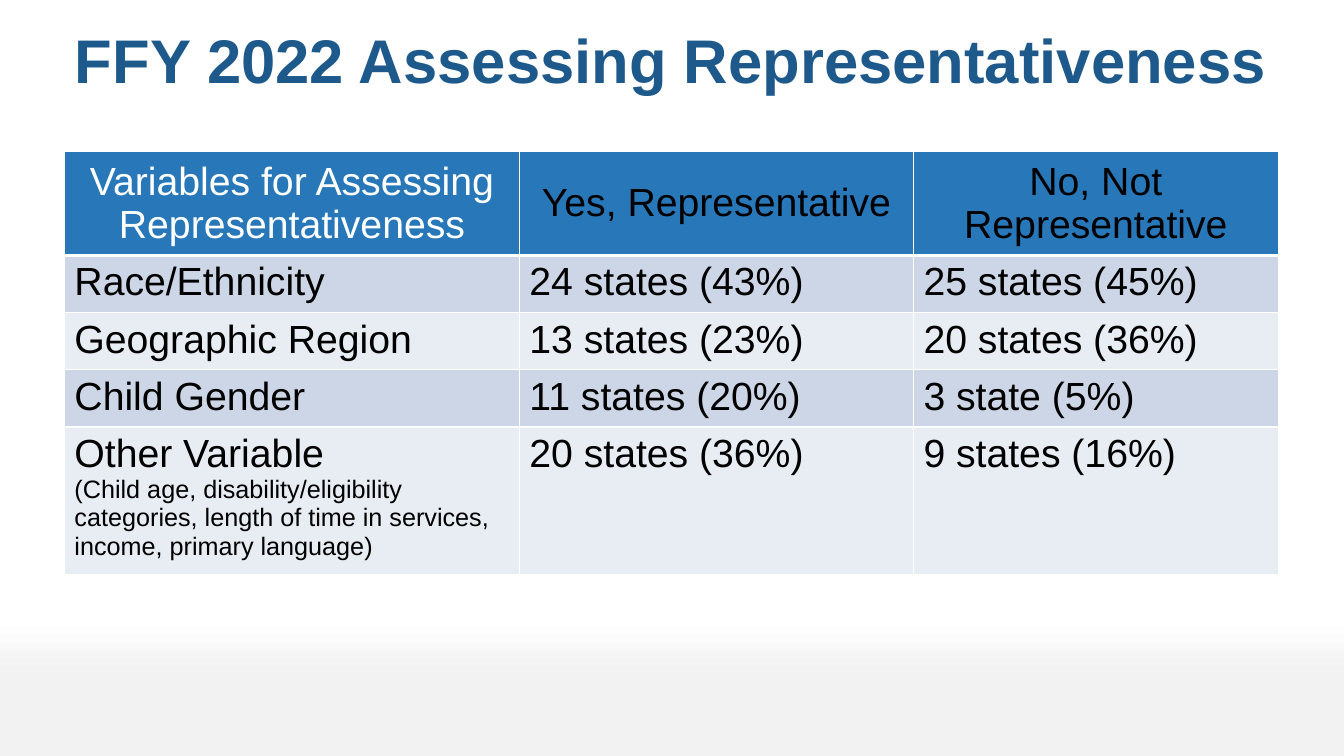
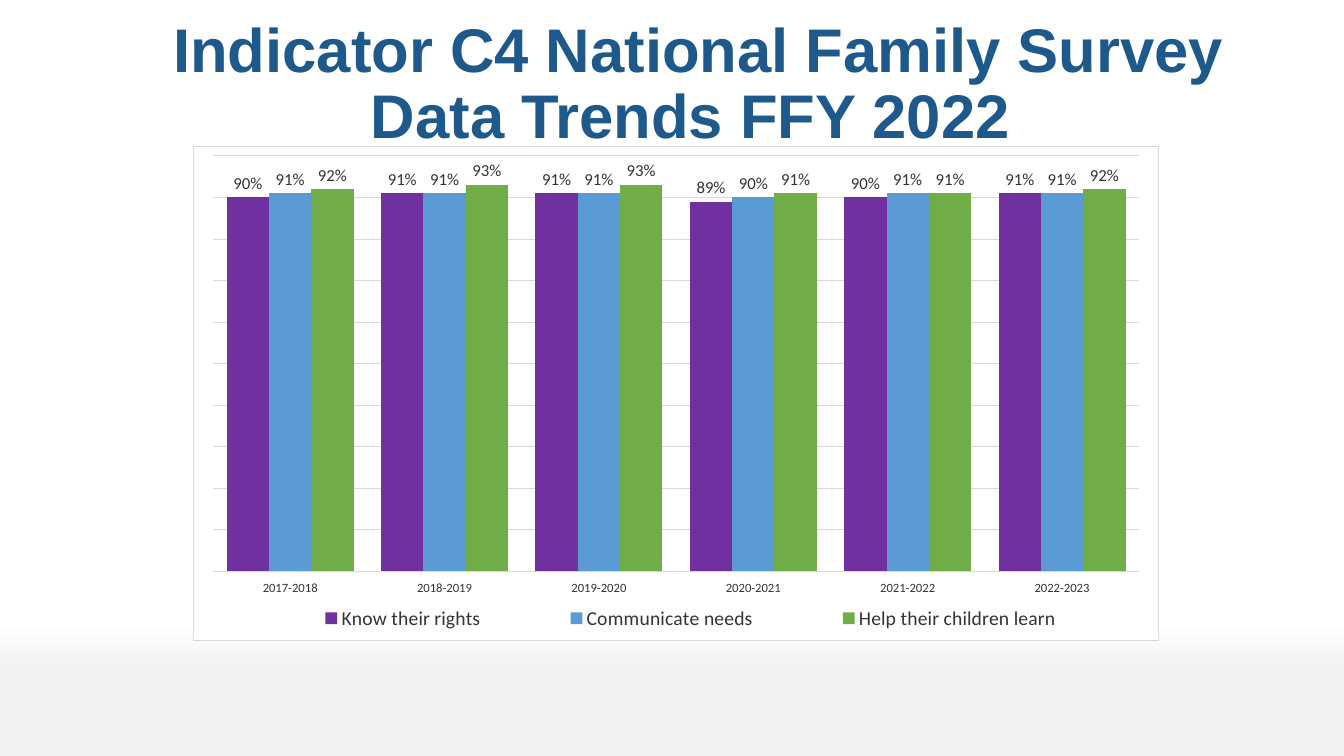
from lxml import etree
from pptx import Presentation
from pptx.chart.data import CategoryChartData
from pptx.dml.color import RGBColor
from pptx.enum.chart import XL_CHART_TYPE as ChartType
from pptx.enum.chart import XL_LABEL_POSITION as LabelPos
from pptx.enum.chart import XL_LEGEND_POSITION as LegendPos
from pptx.enum.chart import XL_TICK_LABEL_POSITION as TickLabelPos
from pptx.enum.chart import XL_TICK_MARK as TickMark
from pptx.enum.text import MSO_ANCHOR as Anchor
from pptx.enum.text import PP_ALIGN as Align
from pptx.oxml import parse_xml
from pptx.oxml.ns import nsdecls, qn
from pptx.util import Pt

WHITE = RGBColor(0xFF, 0xFF, 0xFF)
BLACK = RGBColor(0x00, 0x00, 0x00)
FOOT_GREY = RGBColor(0xF2, 0xF2, 0xF2)
TITLE_BLUE = RGBColor(0x1D, 0x59, 0x8B)
HEADER_BLUE = RGBColor(0x27, 0x77, 0xB9)
BAND_DARK = RGBColor(0xCD, 0xD6, 0xE6)
BAND_LIGHT = RGBColor(0xE8, 0xEC, 0xF3)
GRID_GREY = RGBColor(0xD9, 0xD9, 0xD9)
CHART_TEXT = RGBColor(0x33, 0x33, 0x33)
PURPLE = RGBColor(0x70, 0x30, 0xA0)
SKY = RGBColor(0x5B, 0x9B, 0xD5)
GREEN = RGBColor(0x70, 0xAD, 0x47)


def set_font(font, size, color, name, bold=False):
    font.size, font.name, font.bold = Pt(size), name, bold
    font.color.rgb = color


def write_text(paragraph, text, size=28, color=BLACK, name="Arial", bold=False,
               align=Align.LEFT, spacing=None):
    run = paragraph.add_run()
    run.text = text
    set_font(run.font, size, color, name, bold)
    paragraph.alignment = align
    if spacing:
        paragraph.line_spacing = spacing


def set_line(line, color=GRID_GREY, width=0.75):
    line.color.rgb = color
    line.width = Pt(width)


def set_borders(cell, bottom=1):
    cell_props = cell._tc.get_or_add_tcPr()
    for side, width in (("lnL", 1), ("lnR", 1), ("lnT", 1), ("lnB", bottom)):
        border = etree.SubElement(cell_props, qn(f"a:{side}"), w=str(Pt(width)))
        fill = etree.SubElement(border, qn("a:solidFill"))
        etree.SubElement(fill, qn("a:srgbClr"), val=str(WHITE))


def manual_layout(x, y, w, h, inner=False):
    target = '<c:layoutTarget val="inner"/>' if inner else ""
    return parse_xml(
        f'<c:layout {nsdecls("c")}><c:manualLayout>{target}'
        '<c:xMode val="edge"/><c:yMode val="edge"/>'
        f'<c:x val="{x}"/><c:y val="{y}"/><c:w val="{w}"/><c:h val="{h}"/>'
        '</c:manualLayout></c:layout>')


def drop_layout(element):
    for layout in element.findall(qn("c:layout")):
        element.remove(layout)


class Deck:
    """Holds the shared style and the slide being filled."""

    def __init__(self):
        self.prs = Presentation()
        self.prs.slide_width, self.prs.slide_height = Pt(960), Pt(540)
        self.slide = None
        # White page fading to a grey foot
        fill = self.prs.slide_master.background.fill
        fill.gradient()
        fill.gradient_angle = 270
        stops = ((0.82, WHITE), (0.89, FOOT_GREY))
        for stop, (position, color) in zip(fill.gradient_stops, stops):
            stop.position = position
            stop.color.rgb = color

    def new_slide(self, title, left, top):
        self.slide = self.prs.slides.add_slide(self.prs.slide_layouts[6])
        frame = self.slide.shapes.add_textbox(
            Pt(left), Pt(top), Pt(867), Pt(72)).text_frame
        frame.word_wrap = True
        write_text(frame.paragraphs[0], title, size=44, color=TITLE_BLUE,
                   bold=True, align=Align.CENTER, spacing=0.9)

    def table(self, rows, left, top, widths, heights):
        table = self.slide.shapes.add_table(
            len(rows), len(widths), Pt(left), Pt(top),
            Pt(sum(widths)), Pt(sum(heights))).table
        table.horz_banding = False
        for column, width in zip(table.columns, widths):
            column.width = Pt(width)
        for r, (texts, height) in enumerate(zip(rows, heights)):
            table.rows[r].height = Pt(height)
            for c, text in enumerate(texts):
                self.table_cell(table.cell(r, c), text, r, c)

    def table_cell(self, cell, text, row, column):
        header = row == 0
        set_borders(cell, bottom=3 if header else 1)
        cell.fill.solid()
        cell.fill.fore_color.rgb = (
            HEADER_BLUE if header else BAND_DARK if row % 2 else BAND_LIGHT)
        cell.vertical_anchor = Anchor.MIDDLE if header else Anchor.TOP
        label, _, detail = text.partition("\n")
        write_text(cell.text_frame.paragraphs[0], label,
                   color=WHITE if header and column == 0 else BLACK,
                   align=Align.CENTER if header else Align.LEFT)
        if detail:
            write_text(cell.text_frame.add_paragraph(), detail, size=18)

    def column_chart(self, categories, series, left, top, width, height):
        data = CategoryChartData(number_format="0%")
        data.categories = categories
        for name, values, _ in series:
            data.add_series(name, values)
        chart = self.slide.shapes.add_chart(
            ChartType.COLUMN_CLUSTERED, Pt(left), Pt(top), Pt(width),
            Pt(height), data).chart
        chart.has_title = False
        set_font(chart.font, 10, BLACK, "Calibri")

        # Columns and their labels
        plot = chart.plots[0]
        plot.gap_width, plot.overlap, plot.vary_by_categories = 65, 0, False
        for columns, (_, _, color) in zip(plot.series, series):
            columns.format.fill.solid()
            columns.format.fill.fore_color.rgb = color
            labels = columns.data_labels
            labels.show_value = True
            labels.number_format, labels.number_format_is_linked = "0%", False
            labels.position = LabelPos.OUTSIDE_END
            set_font(labels.font, 12, CHART_TEXT, "Calibri")

        # Axes
        years, share = chart.category_axis, chart.value_axis
        years.major_tick_mark = years.minor_tick_mark = TickMark.NONE
        years.tick_label_position = TickLabelPos.LOW
        set_font(years.tick_labels.font, 9, CHART_TEXT, "Calibri")
        set_line(years.format.line)
        share.minimum_scale, share.maximum_scale, share.major_unit = 0, 1, 0.1
        share.has_major_gridlines = True
        set_line(share.major_gridlines.format.line)
        share.visible = False

        # Legend, layout and frame
        chart.has_legend = True
        legend = chart.legend
        legend.position, legend.include_in_layout = LegendPos.BOTTOM, False
        set_font(legend.font, 14, CHART_TEXT, "Calibri")
        legend_xml = legend._element
        drop_layout(legend_xml)
        legend_xml.find(qn("c:legendPos")).addnext(
            manual_layout(0.05, 0.92, 0.93, 0.07))
        chart_xml = chart._chartSpace.find(qn("c:chart"))
        plot_xml = chart_xml.find(qn("c:plotArea"))
        drop_layout(plot_xml)
        plot_xml.insert(0, manual_layout(0.02, 0.02, 0.96, 0.84, inner=True))
        chart_xml.addnext(parse_xml(
            f'<c:spPr {nsdecls("c", "a")}>'
            f'<a:solidFill><a:srgbClr val="{WHITE}"/></a:solidFill>'
            f'<a:ln w="{Pt(0.75)}"><a:solidFill><a:srgbClr val="{GRID_GREY}"/>'
            '</a:solidFill></a:ln></c:spPr>'))


def main():
    deck = Deck()

    # Representativeness table
    deck.new_slide("FFY 2022 Assessing Representativeness", left=46, top=18)
    deck.table([
        ("Variables for Assessing Representativeness", "Yes, Representative",
         "No, Not Representative"),
        ("Race/Ethnicity", "24 states (43%)", "25 states (45%)"),
        ("Geographic Region", "13 states (23%)", "20 states (36%)"),
        ("Child Gender", "11 states (20%)", "3 state (5%)"),
        ("Other Variable\n(Child age, disability/eligibility categories, "
         "length of time in services, income, primary language)",
         "20 states (36%)", "9 states (16%)"),
    ], left=46, top=108, widths=(325, 281.5, 260.5),
        heights=(69.5, 38.4, 38.4, 38.4, 99))

    # Family survey trends
    deck.new_slide("Indicator C4 National Family Survey Data Trends FFY 2022 ",
                   left=66, top=10)
    deck.column_chart(
        [f"{year}-{year + 1}" for year in range(2017, 2023)],
        [("Know their rights", (0.9, 0.91, 0.91, 0.89, 0.9, 0.91), PURPLE),
         ("Communicate needs", (0.91, 0.91, 0.91, 0.9, 0.91, 0.91), SKY),
         ("Help their children learn",
          (0.92, 0.93, 0.93, 0.91, 0.91, 0.92), GREEN)],
        left=138, top=104, width=690, height=354)

    deck.prs.save("out.pptx")


if __name__ == "__main__":
    main()
